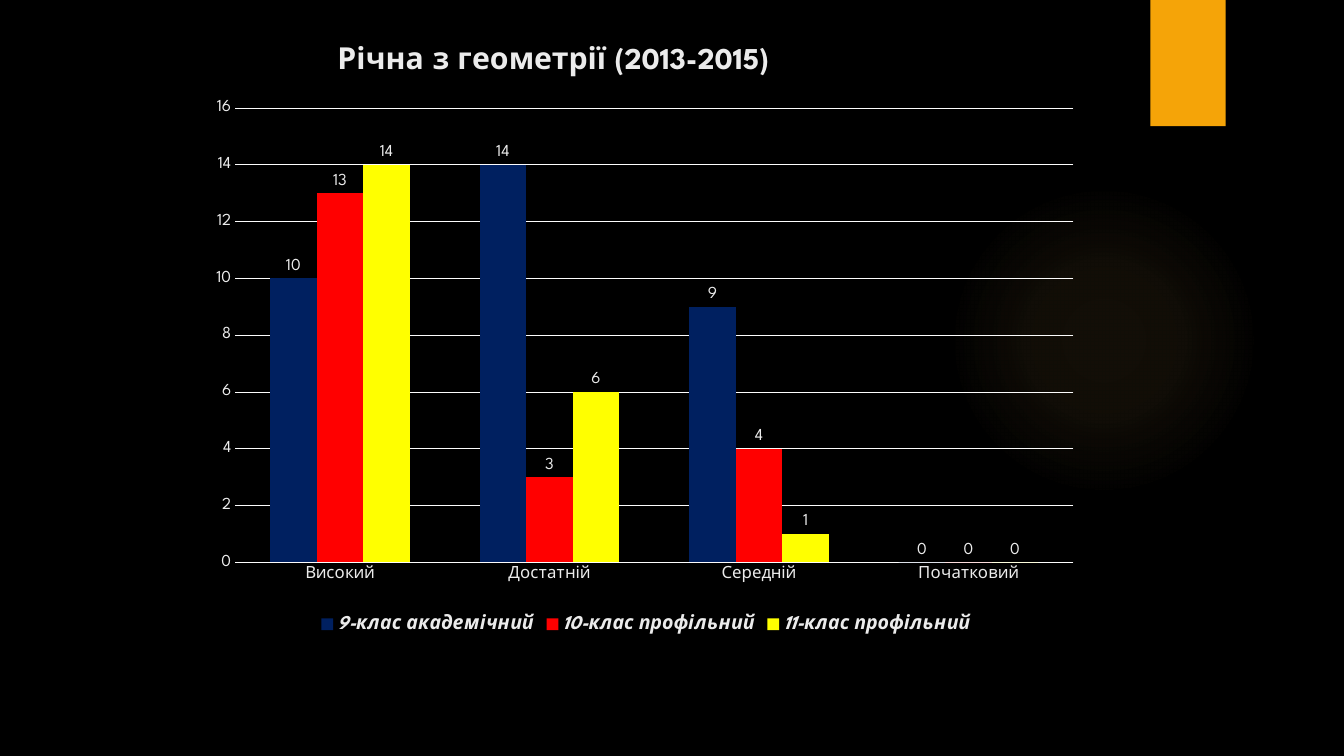
from dataclasses import dataclass

from lxml import etree
from pptx import Presentation
from pptx import util as u
from pptx.chart.data import CategoryChartData
from pptx.dml.color import RGBColor
from pptx.enum import chart as kinds
from pptx.enum import shapes
from pptx.oxml import parse_xml
from pptx.oxml.ns import nsdecls, qn


@dataclass(frozen=True)
class Theme:
    font: str = "League Spartan"
    back: str = "000000"
    accent: str = "F5A408"
    glow: str = "FAC96A"
    ink: str = "EBEBEB"
    rule: str = "FCFCFC"
    title_size: float = 21.6
    legend_size: float = 14
    label_size: float = 12
    rule_width: float = 0.75


THEME = Theme()
WIDTH, HEIGHT = u.Inches(13.33), u.Inches(7.5)
LEVELS = ("Високий", "Достатній", "Середній", "Початковий")
CLASSES = (
    ("9-клас академічний", (10, 14, 9, 0), "002060"),
    ("10-клас профільний", (13, 3, 4, 0), "FF0000"),
    ("11-клас профільний", (14, 6, 1, 0), "FFFF00"),
)


def rgb(code):
    return RGBColor.from_string(code)


def place(left, top, width, height):
    return [int(share * side) for share, side in
            zip((left, top, width, height), (WIDTH, HEIGHT, WIDTH, HEIGHT))]


def style_font(font, size, bold=False, italic=False):
    font.name = THEME.font
    font.size = u.Pt(size)
    font.bold = bold
    font.italic = italic
    font.color.rgb = rgb(THEME.ink)


def add_plain_shape(page, kind, area, color):
    shape = page.shapes.add_shape(kind, *area)
    shape.shadow.inherit = False
    shape.line.fill.background()
    shape.fill.solid()
    shape.fill.fore_color.rgb = rgb(color)
    return shape


def add_glow(page, area):
    glow = add_plain_shape(page, shapes.MSO_SHAPE.OVAL, area, THEME.glow)
    stops = "".join(
        f'<a:gs pos="{position * 1000}"><a:srgbClr val="{THEME.glow}">'
        f'<a:alpha val="{opacity * 1000}"/></a:srgbClr></a:gs>'
        for position, opacity in ((0, 7), (36, 6), (69, 0), (100, 0)))
    gradient = parse_xml(
        f'<a:gradFill {nsdecls("a")} rotWithShape="1"><a:gsLst>{stops}</a:gsLst>'
        '<a:path path="circle"><a:fillToRect l="50000" t="50000" r="50000" b="50000"/>'
        '</a:path></a:gradFill>')
    solid = glow._element.spPr.find(qn("a:solidFill"))
    solid.getparent().replace(solid, gradient)


def add_ribbon(page, area):
    ribbon = add_plain_shape(page, shapes.MSO_SHAPE.RECTANGLE, area, THEME.accent)
    effects = ribbon._element.spPr.find(qn("a:effectLst"))
    effects.append(parse_xml(
        f'<a:outerShdw {nsdecls("a")} blurRad="{u.Pt(3)}" dist="{u.Pt(2)}" dir="5400000">'
        '<a:srgbClr val="000000"><a:alpha val="45000"/></a:srgbClr></a:outerShdw>'))


def set_layout(parent, index, **settings):
    for old in parent.findall(qn("c:layout")):
        parent.remove(old)
    layout = parse_xml(f'<c:layout {nsdecls("c")}><c:manualLayout/></c:layout>')
    for name, value in settings.items():
        etree.SubElement(layout[0], qn(f"c:{name}")).set("val", str(value))
    parent.insert(index, layout)


def style_line(line):
    line.color.rgb = rgb(THEME.rule)
    line.width = u.Pt(THEME.rule_width)


def style_axes(chart):
    for axis in (chart.category_axis, chart.value_axis):
        axis.major_tick_mark = kinds.XL_TICK_MARK.NONE
        axis.minor_tick_mark = kinds.XL_TICK_MARK.NONE
        style_font(axis.tick_labels.font, THEME.label_size)
    style_line(chart.category_axis.format.line)
    values = chart.value_axis
    values.format.line.fill.background()
    values.minimum_scale, values.maximum_scale, values.major_unit = 0, 16, 2
    values.has_major_gridlines = True
    style_line(values.major_gridlines.format.line)


def style_title(chart, wording):
    chart.has_title = True
    title = chart.chart_title
    span = title.text_frame.paragraphs[0].add_run()
    span.text = wording
    style_font(span.font, THEME.title_size, bold=True)
    title.include_in_layout = False
    set_layout(title._element, 1, xMode="edge", yMode="edge", x=0.15, y=0)


def style_series(chart):
    plot = chart.plots[0]
    plot.gap_width = 150
    plot.overlap = 0
    plot.vary_by_categories = False
    for series, (_, _, color) in zip(plot.series, CLASSES):
        series.format.fill.solid()
        series.format.fill.fore_color.rgb = rgb(color)
        series.invert_if_negative = False
        labels = series.data_labels
        labels.show_value = True
        labels.position = kinds.XL_LABEL_POSITION.OUTSIDE_END
        style_font(labels.font, THEME.label_size)


def add_grades_chart(page, area):
    data = CategoryChartData()
    data.categories = LEVELS
    for name, counts, _ in CLASSES:
        data.add_series(name, counts)
    chart = page.shapes.add_chart(kinds.XL_CHART_TYPE.COLUMN_CLUSTERED, *area, data).chart
    style_font(chart.font, THEME.label_size)
    style_title(chart, "Річна з геометрії (2013-2015)")
    style_axes(chart)
    style_series(chart)
    chart.has_legend = True
    chart.legend.position = kinds.XL_LEGEND_POSITION.BOTTOM
    chart.legend.include_in_layout = False
    style_font(chart.legend.font, THEME.legend_size, bold=True, italic=True)
    plot_area = chart.plots[0]._element.getparent()
    set_layout(plot_area, 0, layoutTarget="inner", xMode="edge", yMode="edge",
               x=0.042, y=0.115, w=0.935, h=0.76)


def main():
    deck = Presentation()
    deck.slide_width, deck.slide_height = WIDTH, HEIGHT
    page = deck.slides.add_slide(deck.slide_layouts[6])
    page.background.fill.solid()
    page.background.fill.fore_color.rgb = rgb(THEME.back)
    add_glow(page, place(0.706, 0.244, 0.231, 0.411))
    add_ribbon(page, place(0.856, 0, 0.056, 0.167))
    add_grades_chart(page, place(0.147, 0.052, 0.667, 0.791))
    deck.save("out.pptx")


if __name__ == "__main__":
    main()
